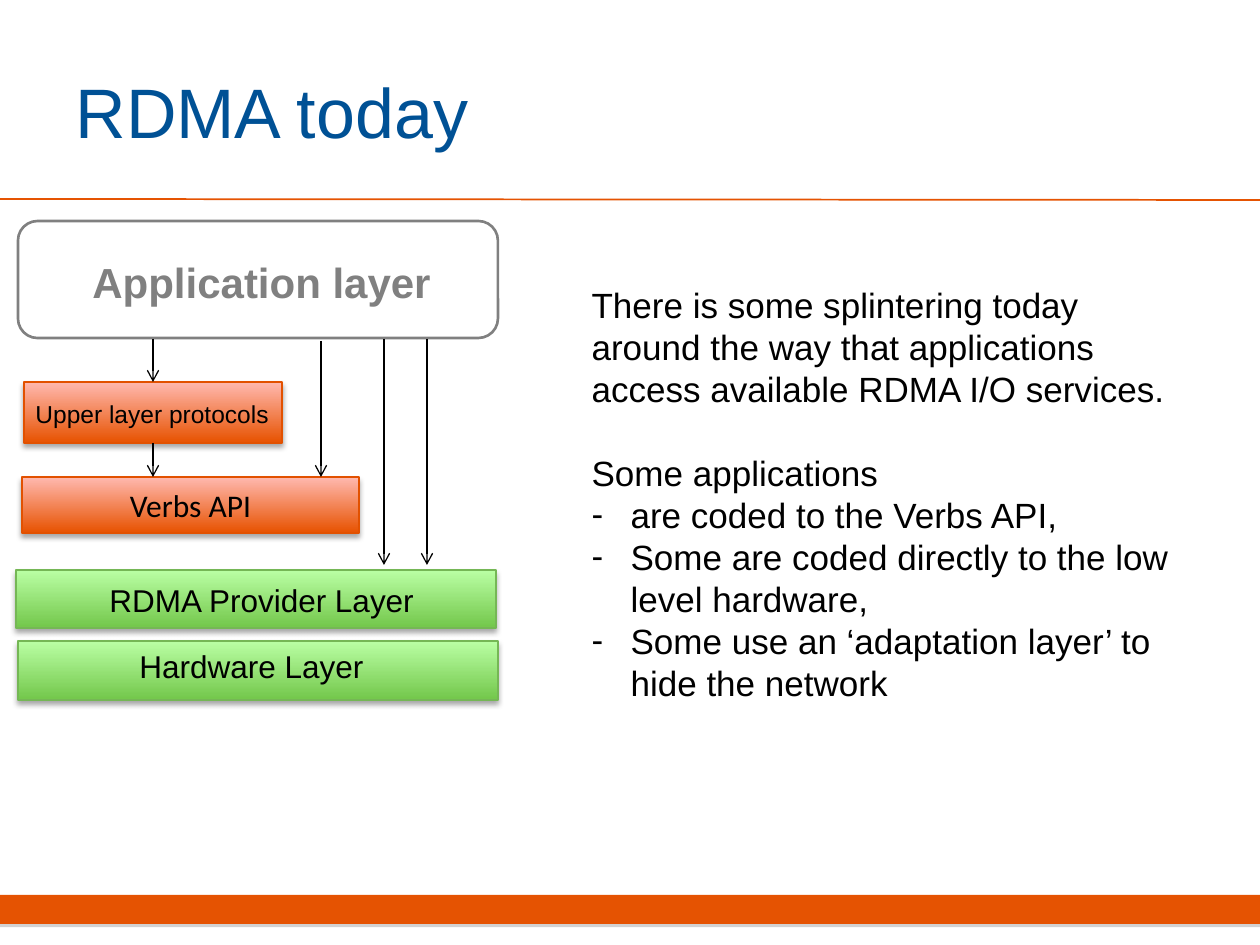
from lxml.etree import SubElement
from pptx import Presentation
from pptx.dml.color import RGBColor
from pptx.enum.shapes import MSO_CONNECTOR, MSO_SHAPE
from pptx.enum.text import MSO_ANCHOR, MSO_AUTO_SIZE, PP_ALIGN
from pptx.oxml.ns import qn
from pptx.util import Emu, Pt

EMU_PER_PX = 914400 / 126
COLORS = {
    "accent": "E55302", "title": "005195", "text": "000000", "gray": "808080",
    "orange_low": "E75200", "orange_high": "FFB9B0", "orange_line": "E25100",
    "green_low": "73C74B", "green_high": "BAFFA4", "green_line": "75B755",
}


def px(*lengths):
    return [Emu(round(length * EMU_PER_PX)) for length in lengths]


def rgb(name):
    return RGBColor.from_string(COLORS[name])


def write(para, text, size=18, color="text", font="Arial", bold=False, align=PP_ALIGN.LEFT):
    para.alignment = align
    span = para.add_run()
    span.text = text
    span.font.name = font
    span.font.size = Pt(size)
    span.font.bold = bold
    span.font.color.rgb = rgb(color)


class SlideBuilder:
    """Holds the page and the shared look of its elements."""

    def __init__(self, page):
        self.page = page

    def place(self, shape, box):
        shape.left, shape.top, shape.width, shape.height = px(*box)

    def shadow(self, shape, color, blur):
        shape.shadow.inherit = False
        effects = shape._element.spPr.find(qn("a:effectLst"))
        outer = SubElement(effects, qn("a:outerShdw"), blurRad=str(Pt(blur)),
                           dist=str(Pt(1.8)), dir="5400000", rotWithShape="0")
        tint = SubElement(outer, qn("a:srgbClr"), val=COLORS[color])
        SubElement(tint, qn("a:alpha"), val="35000")

    def title(self, text, box):
        holder = self.page.shapes.title
        self.place(holder, box)
        holder.text_frame.vertical_anchor = MSO_ANCHOR.MIDDLE
        write(holder.text_frame.paragraphs[0], text, 40, "title")

    def body(self, intro, lead, items, box):
        holder = self.page.placeholders[1]
        self.place(holder, box)
        frame = holder.text_frame
        frame.auto_size = MSO_AUTO_SIZE.NONE
        for index, text in enumerate([intro, lead, *items]):
            para = frame.paragraphs[0] if index == 0 else frame.add_paragraph()
            para.line_spacing = Pt(24)
            para.space_before = Pt(24 if text == lead else 0)
            self.bullet(para, "-" if text in items else None)
            write(para, text, 20)

    def bullet(self, para, mark):
        properties = para._p.get_or_add_pPr()
        indent = px(39)[0] if mark else 0
        properties.set("marL", str(indent))
        properties.set("indent", str(-indent))
        if mark:
            SubElement(properties, qn("a:buChar"), char=mark)
        else:
            SubElement(properties, qn("a:buNone"))

    def footer_bar(self, box):
        bar = self.page.shapes.add_shape(MSO_SHAPE.RECTANGLE, *px(*box))
        bar.fill.solid()
        bar.fill.fore_color.rgb = rgb("accent")
        bar.line.fill.background()
        self.shadow(bar, "gray", 0)

    def outline(self, box):
        frame = self.page.shapes.add_shape(MSO_SHAPE.ROUNDED_RECTANGLE, *px(*box))
        frame.shadow.inherit = False
        frame.fill.background()
        frame.line.color.rgb = rgb("gray")
        frame.line.width = Pt(1.5)

    def layer(self, box, hue):
        block = self.page.shapes.add_shape(MSO_SHAPE.RECTANGLE, *px(*box))
        block.fill.gradient()
        block.fill.gradient_angle = 90
        for stop, position, shade in zip(block.fill.gradient_stops, (0, 1), ("low", "high")):
            stop.position = position
            stop.color.rgb = rgb(f"{hue}_{shade}")
        block.line.color.rgb = rgb(f"{hue}_line")
        block.line.width = Pt(0.75)
        self.shadow(block, "text", 3.1)
        return block

    def label(self, text, box, **style):
        holder = self.page.shapes.add_textbox(*px(*box))
        holder.text_frame.word_wrap = False
        write(holder.text_frame.paragraphs[0], text, **style)

    def line(self, start, end, color="text", width=0.75):
        connector = self.page.shapes.add_connector(MSO_CONNECTOR.STRAIGHT, *px(*start, *end))
        connector.line.color.rgb = rgb(color)
        connector.line.width = Pt(width)
        SubElement(connector._element.spPr, qn("a:effectLst"))
        return connector

    def arrow(self, start, end):
        connector = self.line(start, end)
        SubElement(connector.line._get_or_add_ln(), qn("a:tailEnd"), type="arrow")
        return connector


def main():
    deck = Presentation()
    deck.slide_width, deck.slide_height = px(1260, 945)
    slide = SlideBuilder(deck.slides.add_slide(deck.slide_layouts[1]))

    slide.footer_bar((0, 895, 1260, 29))
    slide.line((0, 199), (1260, 200), "accent", 1)
    slide.title("RDMA today", (63, 32, 1029, 157))

    slide.outline((18, 221, 480, 117))
    slide.layer((18, 641, 480, 59), "green")
    slide.layer((16, 570, 480, 58), "green")
    protocols = slide.layer((24, 382, 258, 61), "orange")
    verbs = slide.layer((22, 477, 337, 56), "orange")
    write(verbs.text_frame.paragraphs[0], "Verbs API", font="Calibri", align=PP_ALIGN.CENTER)

    slide.label("Application layer", (80, 250, 367, 63), size=24, color="gray", bold=True)
    slide.label("Upper layer protocols", (23, 393, 260, 43), size=14)
    slide.label("RDMA Provider Layer", (97, 575, 333, 50))
    slide.label("Hardware Layer", (127, 641, 252, 50))

    slide.arrow((153, 339), (153, 382)).end_connect(protocols, 0)
    slide.arrow((153, 443), (153, 477)).begin_connect(protocols, 2)
    for x, top, bottom in ((321, 341, 477), (384, 339, 565), (427, 339, 565)):
        slide.arrow((x, top), (x, bottom))

    slide.body(
        "There is some splintering today around the way that applications "
        "access available RDMA I/O services.",
        "Some applications",
        ["are coded to the Verbs API,",
         "Some are coded directly to the low level hardware,",
         "Some use an ‘adaptation layer’ to hide the network"],
        (579, 277, 628, 437))
    deck.save("out.pptx")


if __name__ == "__main__":
    main()
